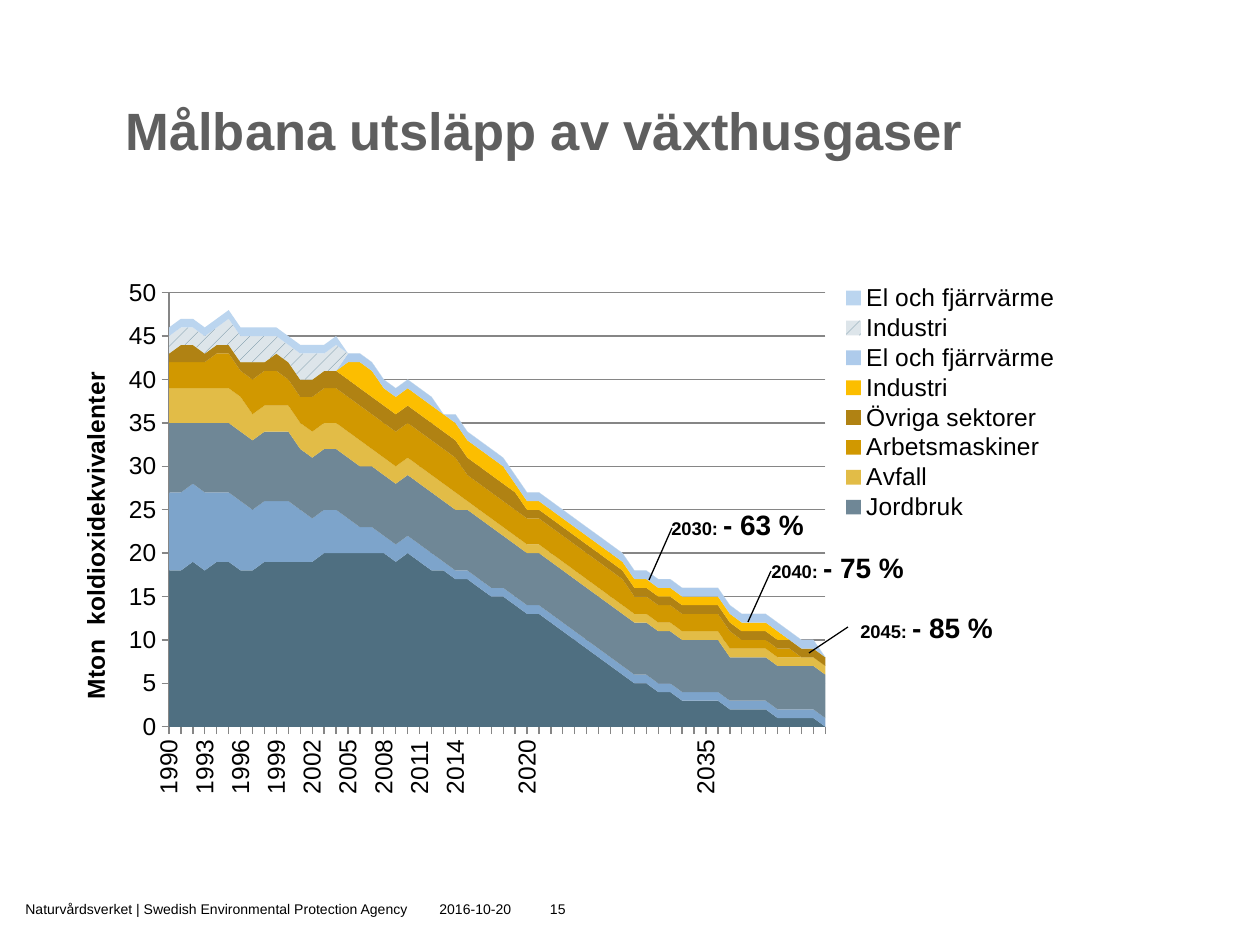
from dataclasses import dataclass
from typing import Optional

from lxml.etree import SubElement
from pptx import Presentation
from pptx.chart.data import CategoryChartData
from pptx.dml.color import RGBColor
from pptx.enum.chart import XL_CHART_TYPE as Chart, XL_LEGEND_POSITION as LegendPos, XL_TICK_MARK as Tick
from pptx.enum.dml import MSO_PATTERN as Pattern
from pptx.enum.shapes import MSO_CONNECTOR as Connector
from pptx.enum.text import MSO_ANCHOR as Anchor, MSO_AUTO_SIZE as AutoSize, PP_ALIGN as Align
from pptx.oxml import parse_xml
from pptx.oxml.ns import nsdecls, qn
from pptx.util import Emu, Pt

BLACK = RGBColor(0x00, 0x00, 0x00)
TITLE_GREY = RGBColor(0x5F, 0x5F, 0x5F)
GRID_GREY = RGBColor(0x86, 0x86, 0x86)
SLATE = RGBColor(0x5A, 0x7E, 0x92)
SKY = RGBColor(0x8D, 0xB9, 0xE5)
STEEL = RGBColor(0x7E, 0x99, 0xAA)
SAND = RGBColor(0xFF, 0xD4, 0x51)
OCHRE = RGBColor(0xEC, 0xAC, 0x00)
BRONZE = RGBColor(0xC7, 0x93, 0x16)
AMBER = RGBColor(0xFC, 0xBE, 0x00)
MIST = RGBColor(0xDD, 0xE5, 0xEA)
PALE_SKY = RGBColor(0xBB, 0xD5, 0xEF)

FONT = "Arial"
YEARS = range(1990, 2046)
SHADE = ("a:shade", 76000)
TINT = ("a:tint", 78000)


@dataclass
class Sector:
    name: str
    color: RGBColor
    values: list[int]
    tone: Optional[tuple[str, int]] = None
    back: Optional[RGBColor] = None
    start: int = YEARS[0]


@dataclass
class Footer:
    text: str
    x: int
    w: int
    align: Align = Align.LEFT


@dataclass
class Target:
    year: str
    cut: str
    x: int
    y: int
    begin: tuple[int, int]
    end: tuple[int, int]


SECTORS = [
    Sector("Series 1", SLATE, [18] * 2 + [19, 18] + [19] * 2 + [18] * 2 + [19] * 5 + [20] * 6 + [19, 20, 19]
           + [18] * 2 + [17] * 2 + [16] + [15] * 2 + [14, 13, *range(13, 5, -1)] + [5] * 2 + [4] * 2
           + [v for v in (3, 2, 1) for _ in range(4)] + [0], SHADE),
    Sector("Series 2", SKY, [9] * 4 + [8] * 3 + [7] * 4 + [6] + [5] * 3 + [4] + [3] * 2 + [2] * 5 + [1] * 33, SHADE),
    Sector("Jordbruk", STEEL, [8] * 2 + [7] + [8] * 8 + [7] * 17 + [6] * 19 + [5] * 9, SHADE),
    Sector("Avfall", SAND, [4] * 7 + [3] * 10 + [2] * 8 + [1] * 31, SHADE),
    Sector("Arbetsmaskiner", OCHRE, [3] * 4 + [4] * 2 + [3] + [4] * 3 + [3] * 2 + [4] * 13 + [3] * 14
           + [2] * 9 + [1] * 5 + [0] * 3, SHADE),
    Sector("Övriga sektorer", BRONZE, [1] + [2] * 2 + [1] * 4 + [2, 1] + [2] * 21 + [1] * 26, SHADE),
    Sector("Industri", AMBER, [2] + [3] * 2 + [2] * 11 + [1] * 23 + [0] * 4, start=2005),
    Sector("El och fjärrvärme", SKY, [1] * 8 + [0] + [1] * 31 + [0], TINT, start=2005),
    Sector("Industri", SLATE, [2] * 5 + [3] * 4 + [2] * 2 + [3] * 2 + [2, 3], back=MIST),
    Sector("El och fjärrvärme", PALE_SKY, [1] * 15),
]
FOOTERS = [
    Footer("2016-10-20", 427, 103),
    Footer("Naturvårdsverket | Swedish Environmental Protection Agency", 13, 418),
    Footer("15", 529, 49, Align.RIGHT),
]
TARGETS = [
    Target("2030: ", "- 63 %", 659, 501, (649, 580), (672, 528)),
    Target("2040: ", "- 75 %", 759, 544, (748, 622), (771, 571)),
    Target("2045: ", "- 85 %", 848, 604, (809, 653), (848, 627)),
]


def px(n: int) -> Emu:
    return Emu(round(n * 914400 / 126))


def box(x: int, y: int, w: int, h: int) -> tuple[Emu, ...]:
    return tuple(px(n) for n in (x, y, w, h))


def apply(obj, fmt: dict) -> None:
    for name, value in fmt.items():
        setattr(obj, name, value)


def style(font, size: float, bold: bool = False, color: RGBColor = BLACK) -> None:
    apply(font, {"name": FONT, "size": Pt(size), "bold": bold})
    font.color.rgb = color


def layout(inner: bool = False, **place: float):
    target = '<c:layoutTarget val="inner"/>' if inner else ""
    modes = "".join(f'<c:{k}Mode val="edge"/>' for k in place if k in "xy")
    sizes = "".join(f'<c:{k} val="{v}"/>' for k, v in place.items())
    return parse_xml(f'<c:layout {nsdecls("c")}><c:manualLayout>{target}{modes}{sizes}</c:manualLayout></c:layout>')


def place(parent, new, after: Optional[str] = None) -> None:
    for old in parent.findall(qn("c:layout")):
        parent.remove(old)
    if after:
        parent.find(qn(after)).addnext(new)
    else:
        parent.insert(0, new)


def paint(series, sector: Sector) -> None:
    fill = series.format.fill
    if sector.back:
        fill.patterned()
        fill.pattern = Pattern.PERCENT_10
        fill.back_color.rgb = sector.back
    else:
        fill.solid()
    fill.fore_color.rgb = sector.color
    series.format.line.fill.background()
    if sector.tone:
        tag, val = sector.tone
        rgb = series._element.find(".//" + qn("a:srgbClr"))
        SubElement(rgb, qn(tag)).set("val", str(val))


def add_emissions(s) -> None:
    data = CategoryChartData(number_format="0")
    data.categories = [str(y) if y <= 2015 or y % 5 == 0 else "" for y in YEARS]
    for sector in SECTORS:
        values = [None] * (sector.start - YEARS[0]) + sector.values
        data.add_series(sector.name, values + [None] * (len(YEARS) - len(values)))
    chart = s.shapes.add_chart(Chart.AREA_STACKED, *box(44, 266, 1042, 536), data).chart
    style(chart.font, 10)
    apply(chart, {"has_title": False, "has_legend": True})
    chart.plots[0].vary_by_categories = False
    for series, sector in zip(chart.plots[0].series, SECTORS):
        paint(series, sector)

    legend = chart.legend
    apply(legend, {"position": LegendPos.RIGHT, "include_in_layout": False})
    style(legend.font, 14)
    place(legend._element, layout(x=0.76, y=0.03, w=0.22, h=0.45), "c:legendPos")
    for idx in (1, 0):
        entry = parse_xml(f'<c:legendEntry {nsdecls("c")}><c:idx val="{idx}"/><c:delete val="1"/></c:legendEntry>')
        legend._element.find(qn("c:legendPos")).addnext(entry)

    cat, val = chart.category_axis, chart.value_axis
    for axis in (cat, val):
        apply(axis, {"major_tick_mark": Tick.OUTSIDE, "minor_tick_mark": Tick.NONE})
        style(axis.tick_labels.font, 14)
        axis.format.line.color.rgb = GRID_GREY
    cat.has_major_gridlines = False
    cat._element.find(qn("c:txPr")).find(qn("a:bodyPr")).set("rot", "-5400000")
    skip = parse_xml(f'<c:tickLblSkip {nsdecls("c")} val="3"/>')
    cat._element.find(qn("c:noMultiLvlLbl")).addprevious(skip)
    apply(val, {"minimum_scale": 0, "maximum_scale": 50, "major_unit": 5, "has_major_gridlines": True})
    val.major_gridlines.format.line.color.rgb = GRID_GREY
    apply(val.tick_labels, {"number_format": "0", "number_format_is_linked": False})
    val._element.find(qn("c:crossBetween")).set("val", "midCat")
    tf = val.axis_title.text_frame
    r = tf.paragraphs[0].add_run()
    r.text = "Mton  koldioxidekvivalenter"
    style(r.font, 14, True)
    tf._txBody.find(qn("a:bodyPr")).set("rot", "-5400000")
    place(val.axis_title._element, layout(x=0.03, y=0.19), "c:tx")
    place(chart._chartSpace.chart.plotArea, layout(True, x=0.12, y=0.05, w=0.63, h=0.81))


def add_text(s, at: tuple[int, ...], runs: list[tuple[str, float]], bold: bool = False,
             align: Align = Align.LEFT, anchor: Anchor = Anchor.TOP) -> None:
    tf = s.shapes.add_textbox(*box(*at)).text_frame
    apply(tf, {"word_wrap": True, "vertical_anchor": anchor})
    p = tf.paragraphs[0]
    p.alignment = align
    for text, size in runs:
        r = p.add_run()
        r.text = text
        style(r.font, size, bold)


def add_target(s, t: Target) -> None:
    add_text(s, (t.x, t.y, 228, 47), [(t.year, 10.5), (t.cut, 16)], bold=True)
    line = s.shapes.add_connector(Connector.STRAIGHT, *(px(n) for n in t.begin + t.end))
    line.line.color.rgb = BLACK
    line.line.width = Pt(0.75)
    SubElement(line._element.spPr, qn("a:effectLst"))


def add_title(s) -> None:
    sp = s.shapes.title
    apply(sp, dict(zip(("left", "top", "width", "height"), box(113, 86, 1012, 169))))
    tf = sp.text_frame
    apply(tf, {"vertical_anchor": Anchor.TOP, "margin_top": px(12), "auto_size": AutoSize.NONE, "word_wrap": True})
    p = tf.paragraphs[0]
    p.alignment = Align.LEFT
    r = p.add_run()
    r.text = "Målbana utsläpp av växthusgaser"
    style(r.font, 30, True, TITLE_GREY)


def main() -> None:
    prs = Presentation()
    apply(prs, {"slide_width": px(1260), "slide_height": px(945)})
    s = prs.slides.add_slide(prs.slide_layouts[5])
    add_title(s)
    for f in FOOTERS:
        add_text(s, (f.x, 891, f.w, 35), [(f.text, 8)], align=f.align, anchor=Anchor.MIDDLE)
    add_emissions(s)
    for t in TARGETS:
        add_target(s, t)
    prs.save("out.pptx")


if __name__ == "__main__":
    main()
